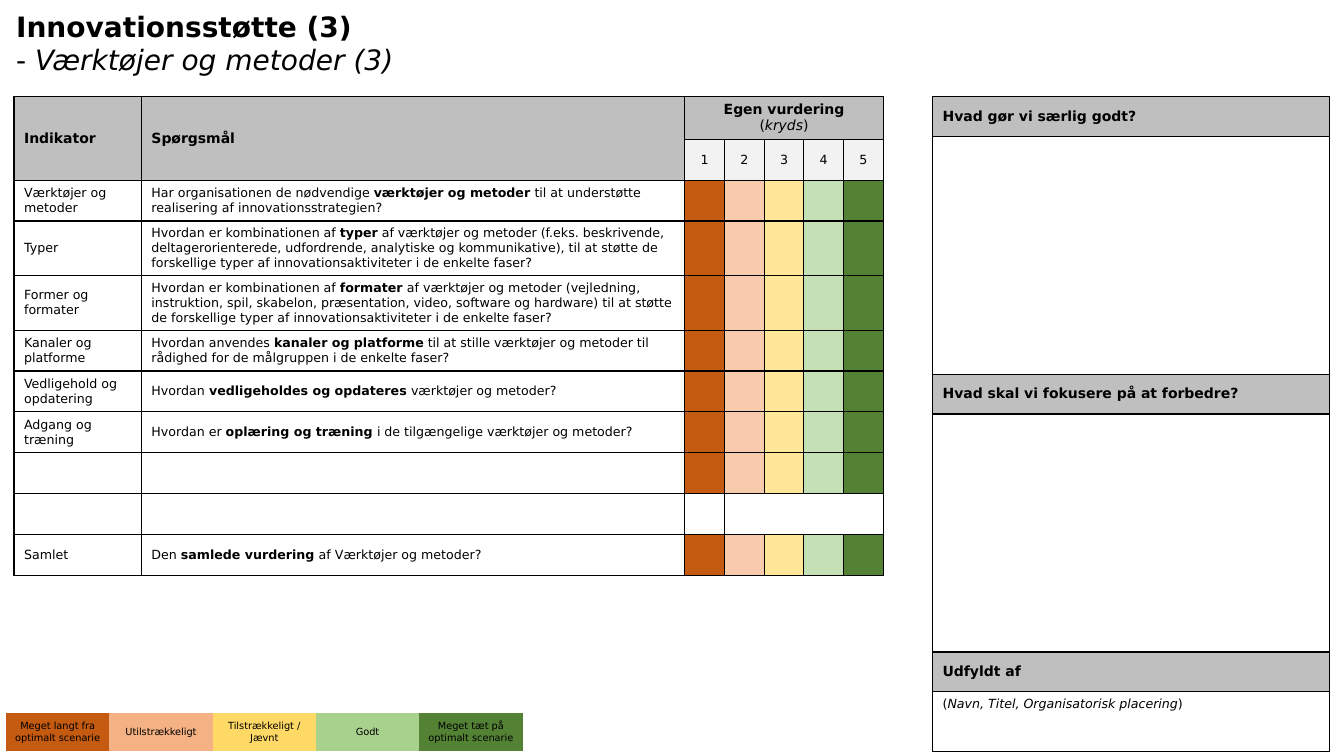
from dataclasses import dataclass

from lxml import etree
from pptx import Presentation
from pptx import util as u
from pptx.dml import color
from pptx.enum import text
from pptx.oxml import ns


@dataclass(frozen=True)
class Theme:
    font: str = "DejaVu Sans"
    ink: str = "000000"
    heading: str = "BFBFBF"
    score: str = "F2F2F2"
    ratings: tuple = ("C55A11", "F8CBAD", "FFE699", "C5E0B4", "548235")
    legend: tuple = ("C55A11", "F4B183", "FFD966", "A9D18E", "548235")
    title_size: float = 20
    heading_size: float = 10
    body_size: float = 9
    legend_size: float = 7
    border: float = 1


THEME = Theme()
LEFT, CENTER = text.PP_ALIGN.LEFT, text.PP_ALIGN.CENTER
TOP, MIDDLE = text.MSO_ANCHOR.TOP, text.MSO_ANCHOR.MIDDLE
PLAIN_TABLE = "{2D5ABB26-0587-4C30-8999-92F81FD0307C}"


def write(frame, content, size=THEME.body_size, align=LEFT):
    """Lines split on newline, breaks on vertical tab; *bold* and _italic_."""
    for index, line in enumerate(content.split("\n")):
        paragraph = frame.add_paragraph() if index else frame.paragraphs[0]
        paragraph.alignment = align
        for part_index, part in enumerate(line.split("\v")):
            if part_index:
                paragraph.add_line_break()
            for bold_index, stretch in enumerate(part.split("*")):
                for italic_index, words in enumerate(stretch.split("_")):
                    if not words and part:
                        continue
                    run = paragraph.add_run()
                    run.text = words
                    run.font.name = THEME.font
                    run.font.size = u.Pt(size)
                    run.font.bold = bold_index % 2 == 1
                    run.font.italic = italic_index % 2 == 1
                    run.font.color.rgb = color.RGBColor.from_string(THEME.ink)


class Sheet:
    def __init__(self, deck, theme):
        self.theme = theme
        self.slide = deck.slides.add_slide(deck.slide_layouts[5])

    def title(self, content, left, top, width, height):
        heading = self.slide.shapes.title
        heading.left, heading.top = u.Pt(left), u.Pt(top)
        heading.width, heading.height = u.Pt(width), u.Pt(height)
        heading.text_frame.vertical_anchor = TOP
        heading.text_frame.word_wrap = True
        write(heading.text_frame, content, size=self.theme.title_size)

    def grid(self, left, top, widths, heights):
        frame = self.slide.shapes.add_table(
            len(heights), len(widths), u.Pt(left), u.Pt(top),
            u.Pt(sum(widths)), u.Pt(sum(heights)))
        grid = frame.table
        grid.first_row = grid.horz_banding = False
        grid._tbl.tblPr.find(ns.qn("a:tableStyleId")).text = PLAIN_TABLE
        for column, width in zip(grid.columns, widths):
            column.width = u.Pt(width)
        for row, height in zip(grid.rows, heights):
            row.height = u.Pt(height)
        return grid

    def cell(self, cell, content="", fill=None, sides="LRTB", anchor=MIDDLE, **style):
        self.borders(cell, sides)
        if fill:
            cell.fill.solid()
            cell.fill.fore_color.rgb = color.RGBColor.from_string(fill)
        else:
            cell.fill.background()
        cell.vertical_anchor = anchor
        write(cell.text_frame, content, **style)

    def borders(self, cell, sides):
        properties = cell._tc.get_or_add_tcPr()
        for side in sides:
            line = etree.SubElement(properties, ns.qn(f"a:ln{side}"),
                                    w=str(u.Pt(self.theme.border)))
            solid = etree.SubElement(line, ns.qn("a:solidFill"))
            etree.SubElement(solid, ns.qn("a:srgbClr"), val=self.theme.ink)


QUESTIONS = [
    ("Værktøjer og metoder",
     "Har organisationen de nødvendige *værktøjer og metoder *til at understøtte "
     "realisering af innovationsstrategien?"),
    ("Typer",
     "Hvordan er kombinationen af *typer* af værktøjer og metoder (f.eks. beskrivende, "
     "deltagerorienterede, udfordrende, analytiske og kommunikative), til at støtte de "
     "forskellige typer af innovationsaktiviteter i de enkelte faser?"),
    ("Former og formater",
     "Hvordan er kombinationen af *formater *af værktøjer og metoder (vejledning, "
     "instruktion, spil, skabelon, præsentation, video, software og hardware) til at støtte "
     "de forskellige typer af innovationsaktiviteter i de enkelte faser?"),
    ("Kanaler og platforme",
     "Hvordan anvendes *kanaler og platforme* til at stille værktøjer og metoder til "
     "rådighed for de målgruppen i de enkelte faser?"),
    ("Vedligehold og opdatering",
     "Hvordan* vedligeholdes og opdateres *værktøjer og metoder?"),
    ("Adgang og træning",
     "Hvordan er *oplæring og træning *i de tilgængelige værktøjer og metoder?"),
    ("", ""),
    None,
    ("Samlet", "Den *samlede vurdering *af Værktøjer og metoder?"),
]
REFLECTIONS = [
    ("*Hvad gør vi særlig godt?*", "", 170),
    ("*Hvad skal vi fokusere på at forbedre?*", "", 170),
    ("*Udfyldt af*", "(_Navn, Titel, Organisatorisk placering_)", 42.5),
]
LEGEND = ["Meget langt fra optimalt scenarie", "Utilstrækkeligt",
          "Tilstrækkeligt / Jævnt", "Godt", "Meget tæt på optimalt scenarie"]


def add_assessment(sheet):
    theme = sheet.theme
    scores = len(theme.ratings)
    assessment = sheet.grid(10, 69, [91, 388.2] + [28.36] * scores,
                            [28.4] + [29.2] * (len(QUESTIONS) + 1))
    headings = ["*Indikator*", "*Spørgsmål*", "*Egen vurdering*\v(_kryds_)"]
    for column in range(scores + 2):
        heading = headings[column] if column < 3 else ""
        sheet.cell(assessment.cell(0, column), heading, fill=theme.heading,
                   size=theme.heading_size, align=CENTER if column > 1 else LEFT)
        score = str(column - 1) if column > 1 else ""
        sheet.cell(assessment.cell(1, column), score, align=CENTER,
                   fill=theme.score if score else theme.heading)
    for column in range(2):
        assessment.cell(0, column).merge(assessment.cell(1, column))
    assessment.cell(0, 2).merge(assessment.cell(0, scores + 1))

    for row, question in enumerate(QUESTIONS, start=2):
        for column, words in enumerate(question or ("", "")):
            sheet.cell(assessment.cell(row, column), words)
        for step, rating in enumerate(theme.ratings):
            sides = "LRTB"
            if question is None:
                sides = ("L" if step == 0 else "") + ("R" if step == scores - 1 else "") + "TB"
            sheet.cell(assessment.cell(row, step + 2), sides=sides,
                       fill=rating if question else None)


def add_reflections(sheet):
    heights = [height for *_, space in REFLECTIONS for height in (28.4, space)]
    reflections = sheet.grid(666.1, 69, [283.6], heights)
    for index, (heading, answer, _) in enumerate(REFLECTIONS):
        sheet.cell(reflections.cell(2 * index, 0), heading,
                   fill=sheet.theme.heading, size=sheet.theme.heading_size)
        sheet.cell(reflections.cell(2 * index + 1, 0), answer, anchor=TOP)


def add_legend(sheet):
    legend = sheet.grid(4.3, 509.2, [73.8] * len(LEGEND), [27.5])
    for column, (label, fill) in enumerate(zip(LEGEND, sheet.theme.legend)):
        step = legend.cell(0, column)
        step.margin_left = step.margin_right = u.Pt(5)
        step.margin_top = step.margin_bottom = 0
        sheet.cell(step, label, fill=fill, sides="",
                   size=sheet.theme.legend_size, align=CENTER)


def main():
    deck = Presentation()
    deck.slide_width, deck.slide_height = u.Pt(960), u.Pt(540)
    sheet = Sheet(deck, THEME)
    sheet.title("*Innovationsstøtte (3)*\n- _Værktøjer og metoder (3)_", 4.3, 2.9, 714, 55.4)
    add_assessment(sheet)
    add_reflections(sheet)
    add_legend(sheet)
    deck.save("out.pptx")


if __name__ == "__main__":
    main()
